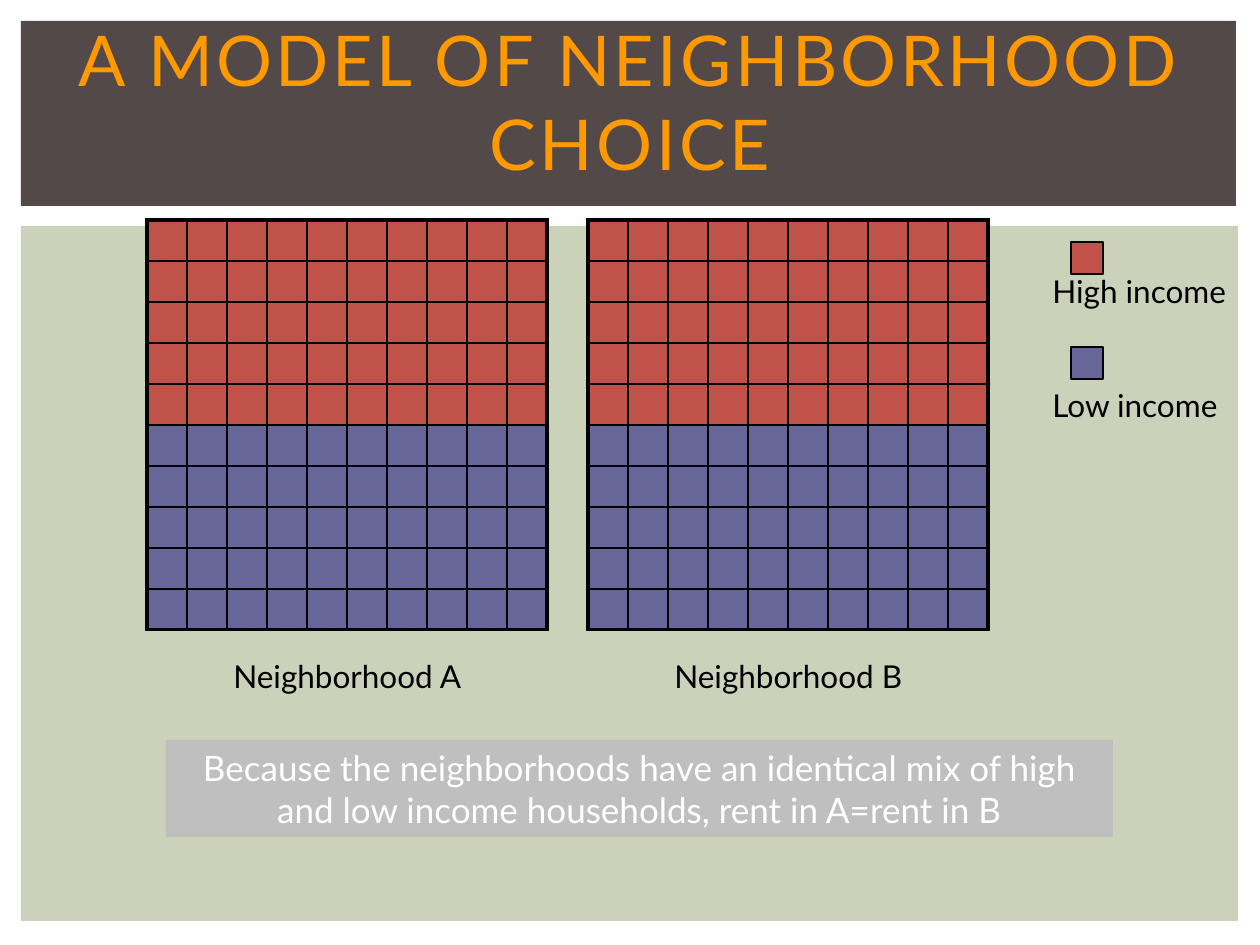
from dataclasses import dataclass

from lxml import etree
from pptx import Presentation
from pptx.dml.color import RGBColor
from pptx.enum.shapes import MSO_SHAPE
from pptx.enum.text import MSO_ANCHOR, PP_ALIGN
from pptx.oxml.ns import qn
from pptx.util import Pt

RECT = MSO_SHAPE.RECTANGLE
LEFT, CENTER = PP_ALIGN.LEFT, PP_ALIGN.CENTER
TOP, MIDDLE = MSO_ANCHOR.TOP, MSO_ANCHOR.MIDDLE

EMU_PER_PX = 914400 / 126
FONT = "Lato"
BLACK, WHITE = "000000", "FFFFFF"
HIGH, LOW = "C0524A", "666699"
GRID_TOP, GRID_SIZE = 220, 10
COL_W, ROW_H = 40, 41
THIN, THICK = 1, 2.25


@dataclass
class Box:
    x: int
    y: int
    w: int
    h: int


@dataclass
class Neighborhood:
    name: str
    x: int


@dataclass
class LegendKey:
    color: str
    y: int


NEIGHBORHOODS = [Neighborhood("Neighborhood A", 147), Neighborhood("Neighborhood B", 588)]
LEGEND_KEYS = [LegendKey(HIGH, 242), LegendKey(LOW, 347)]


def px(n: int) -> int:
    return round(n * EMU_PER_PX)


def rgb(color: str) -> RGBColor:
    return RGBColor.from_string(color)


def place(box: Box) -> list[int]:
    return [px(n) for n in (box.x, box.y, box.w, box.h)]


def add_rect(s, box: Box, fill: str, line: str | None = None):
    sp = s.shapes.add_shape(RECT, *place(box))
    sp.shadow.inherit = False
    sp.fill.solid()
    sp.fill.fore_color.rgb = rgb(fill)
    if line:
        sp.line.color.rgb = rgb(line)
        sp.line.width = Pt(0.75)
    else:
        sp.line.fill.background()
    return sp


def write(sp, text: str, *, size: float = 18, color: str = BLACK, align=LEFT,
          anchor=TOP, wrap: bool = False, spacing: float = 0, gap: float = 0) -> None:
    tf = sp.text_frame
    tf.word_wrap = wrap
    tf.vertical_anchor = anchor
    for i, line in enumerate(text.split("\n")):
        p = tf.add_paragraph() if i else tf.paragraphs[0]
        p.alignment = align
        if i:
            p.space_before = Pt(gap)
        r = p.add_run()
        r.text = line
        r.font.name = FONT
        r.font.size = Pt(size)
        r.font.color.rgb = rgb(color)
        if spacing:
            r.font._element.set("spc", str(round(spacing * 100)))


def add_text(s, box: Box, text: str, **style) -> None:
    write(s.shapes.add_textbox(*place(box)), text, **style)


def add_border(cell, side: str, width: float) -> None:
    ln = etree.SubElement(cell._tc.get_or_add_tcPr(), qn(f"a:ln{side}"), w=str(Pt(width)))
    fill = etree.SubElement(ln, qn("a:solidFill"))
    etree.SubElement(fill, qn("a:srgbClr"), val=BLACK)


def add_grid(s, x: int) -> None:
    box = Box(x, GRID_TOP, GRID_SIZE * COL_W, GRID_SIZE * ROW_H)
    table = s.shapes.add_table(GRID_SIZE, GRID_SIZE, *place(box)).table
    table.first_row = table.horz_banding = False
    for col in table.columns:
        col.width = px(COL_W)
    last = GRID_SIZE - 1
    for i, row in enumerate(table.rows):
        row.height = px(ROW_H)
        for j, cell in enumerate(row.cells):
            cell.margin_left = cell.margin_right = cell.margin_top = cell.margin_bottom = 0
            outer = {"L": j == 0, "R": j == last, "T": i == 0, "B": i == last}
            for side, is_outer in outer.items():
                add_border(cell, side, THICK if is_outer else THIN)
            cell.fill.solid()
            cell.fill.fore_color.rgb = rgb(HIGH if i < GRID_SIZE // 2 else LOW)


def main() -> None:
    prs = Presentation()
    prs.slide_width, prs.slide_height = px(1260), px(945)
    s = prs.slides.add_slide(prs.slide_layouts[6])

    add_rect(s, Box(21, 226, 1217, 695), "CCD1B9")
    add_rect(s, Box(21, 21, 1215, 185), "534949")
    add_text(s, Box(63, 21, 1134, 158), "A MODEL OF NEIGHBORHOOD CHOICE", size=40,
             color="FF9900", align=CENTER, anchor=MIDDLE, wrap=True, spacing=2)

    for n in NEIGHBORHOODS:
        add_grid(s, n.x)
        add_text(s, Box(n.x + 74, 651, 253, 50), n.name)

    callout = add_rect(s, Box(166, 740, 947, 97), "BFBFBF")
    write(callout, "Because the neighborhoods have an identical mix of high and low income "
          "households, rent in A=rent in B", size=20, color=WHITE, align=CENTER, wrap=True)

    for key in LEGEND_KEYS:
        add_rect(s, Box(1071, key.y, 32, 32), key.color, BLACK)
    add_text(s, Box(1040, 266, 200, 164), "High income\nLow income", gap=43.2)

    prs.save("out.pptx")


if __name__ == "__main__":
    main()
